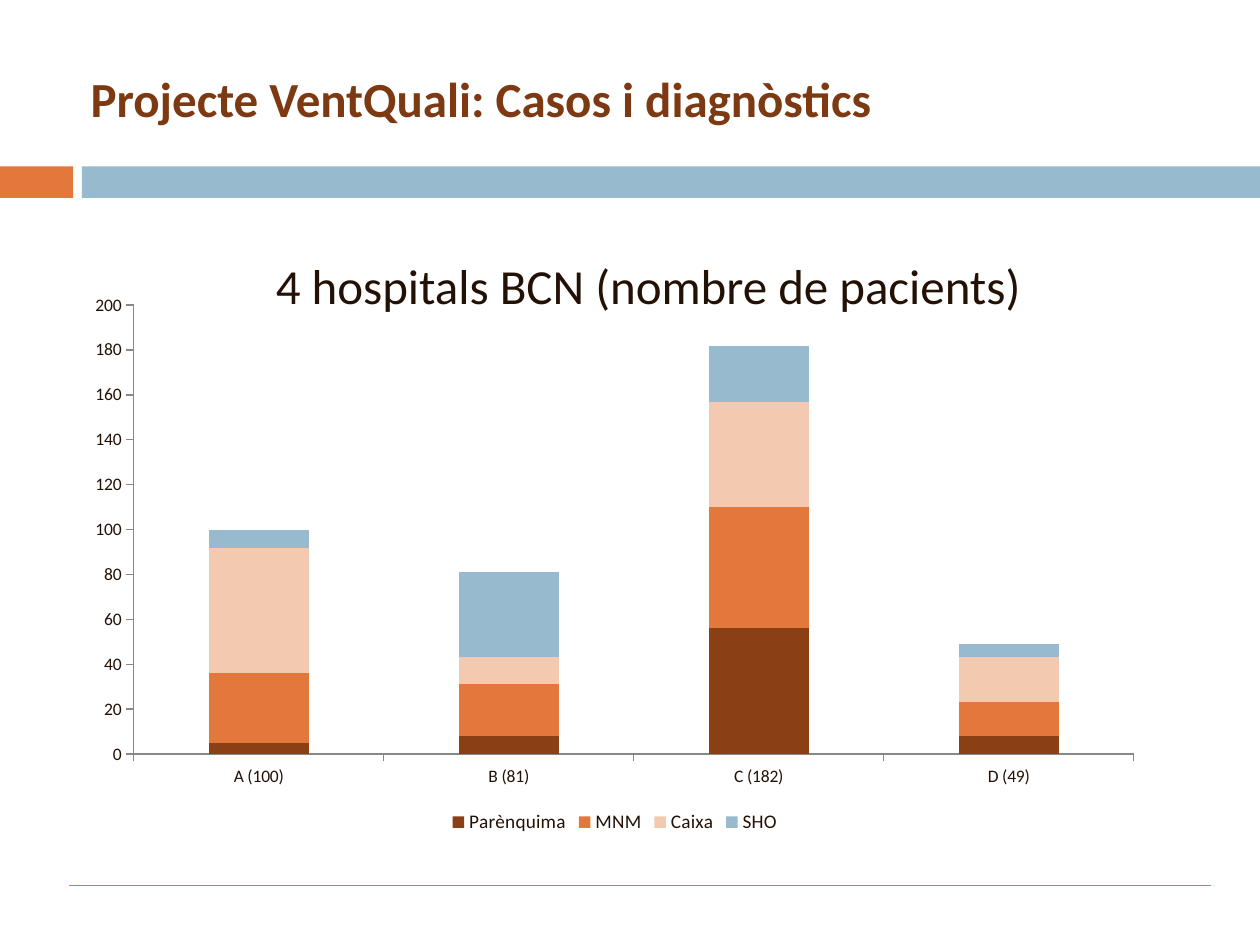
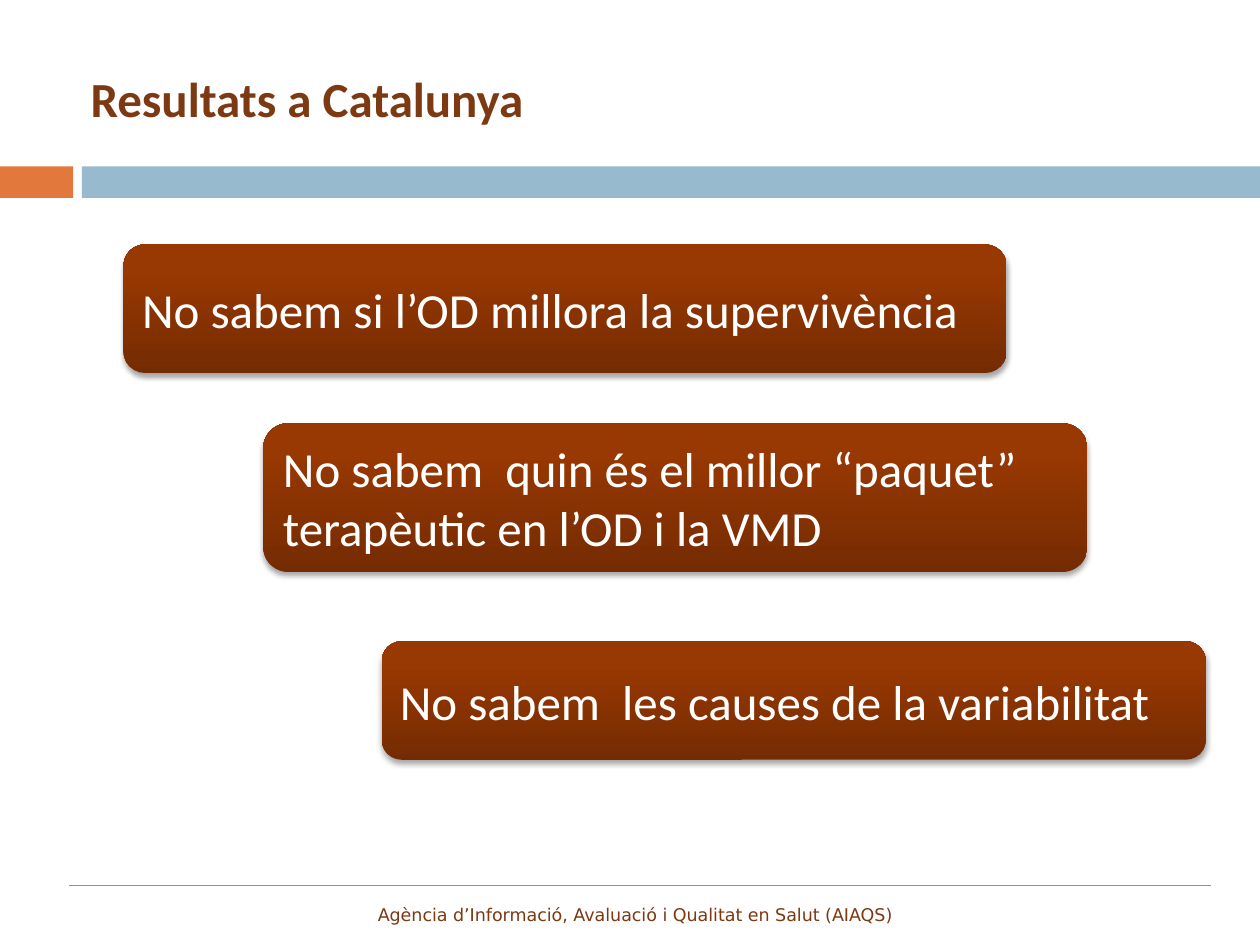
from pptx import Presentation
from pptx.chart.data import CategoryChartData
from pptx.dml.color import RGBColor
from pptx.enum.chart import XL_CHART_TYPE, XL_LEGEND_POSITION, XL_TICK_MARK
from pptx.enum.shapes import MSO_CONNECTOR, MSO_SHAPE
from pptx.enum.text import MSO_ANCHOR, PP_ALIGN
from pptx.oxml import parse_xml
from pptx.oxml.ns import nsdecls
from pptx.util import Inches, Pt

COLORS = {
    "orange": "E2783B", "blue": "97BACF", "title": "7C3912", "text": "231106",
    "brown": "8B3F14", "peach": "F3C9B0", "axis": "888888", "white": "FFFFFF",
    "card_dark": "752B02", "card_mid": "983802", "card_light": "9B3800",
    "shadow": "000000",
}
TITLE_FORMAT = {"name": "Calibri", "size": Pt(28), "bold": True}
BODY_FORMAT = {"name": "Calibri", "size": Pt(28)}
FOOTER_FORMAT = {"name": "DejaVu Sans", "size": Pt(10)}
AXIS_FORMAT = {"name": "Calibri", "size": Pt(10)}
LEGEND_FORMAT = {"name": "Calibri", "size": Pt(11)}

TITLE_BOX = (0.62, 0.31, 8.88, 0.94)
FOOTER_BOX = (0.55, 7.03, 8.98, 0.36)
BANDS = [((0, 1.32, 0.58, 0.25), "orange"), ((0.65, 1.32, 9.35, 0.25), "blue")]
FOOTER_RULE = (0.55, 7.03, 9.61, 7.03)

CATEGORIES = ["A (100)", "B (81)", "C (182)", "D (49)"]
DIAGNOSES = [
    ("Parènquima", (5, 8, 56, 8), "brown"),
    ("MNM", (31, 23, 54, 15), "orange"),
    ("Caixa", (56, 12, 47, 20), "peach"),
    ("SHO", (8, 38, 25, 6), "blue"),
]
UNKNOWNS = [
    ((0.98, 1.94, 7.01, 1.02), "No sabem si l’OD millora la supervivència"),
    ((2.09, 3.36, 6.54, 1.18),
     "No sabem  quin és el millor “paquet” terapèutic en l’OD i la VMD"),
    ((3.03, 5.09, 6.54, 0.94), "No sabem  les causes de la variabilitat"),
]


def rgb(color):
    return RGBColor.from_string(COLORS[color])


def inches(box):
    return [Inches(length) for length in box]


def format_font(font, values, color):
    for name, value in values.items():
        setattr(font, name, value)
    font.color.rgb = rgb(color)


def write_text(shape, text, values, color, anchor=MSO_ANCHOR.MIDDLE,
               align=PP_ALIGN.LEFT, wrap=True):
    frame = shape.text_frame
    frame.word_wrap = wrap
    frame.vertical_anchor = anchor
    paragraph = frame.paragraphs[0]
    paragraph.alignment = align
    run = paragraph.add_run()
    run.text = text
    format_font(run.font, values, color)


def add_text(slide, box, *args, **options):
    write_text(slide.shapes.add_textbox(*inches(box)), *args, **options)


def add_frame(presentation, title):
    """Add a slide with the bands, bottom rule and title that all slides share."""
    slide = presentation.slides.add_slide(presentation.slide_layouts[6])
    for box, color in BANDS:
        band = slide.shapes.add_shape(MSO_SHAPE.RECTANGLE, *inches(box))
        band.shadow.inherit = False
        band.fill.solid()
        band.fill.fore_color.rgb = rgb(color)
        band.line.fill.background()
    rule = slide.shapes.add_connector(MSO_CONNECTOR.STRAIGHT, *inches(FOOTER_RULE))
    rule.line.color.rgb = rgb("orange")
    rule.line.width = Pt(0.75)
    rule._element.spPr.append(parse_xml(f"<a:effectLst {nsdecls('a')}/>"))
    add_text(slide, TITLE_BOX, title, TITLE_FORMAT, "title")
    return slide


def set_plot_layout(chart, **fractions):
    """Fix the inner plot area as fractions of the chart frame."""
    plot_area = chart._chartSpace.chart.plotArea
    for layout in plot_area.xpath("c:layout"):
        plot_area.remove(layout)
    sizes = "".join(f'<c:{name} val="{value}"/>' for name, value in fractions.items())
    plot_area.insert(0, parse_xml(
        f"<c:layout {nsdecls('c')}><c:manualLayout>"
        '<c:layoutTarget val="inner"/><c:xMode val="edge"/><c:yMode val="edge"/>'
        f"{sizes}</c:manualLayout></c:layout>"))


def add_diagnosis_chart(slide, box):
    data = CategoryChartData(number_format="0")
    data.categories = CATEGORIES
    for name, values, _ in DIAGNOSES:
        data.add_series(name, values)
    chart = slide.shapes.add_chart(
        XL_CHART_TYPE.COLUMN_STACKED, *inches(box), data).chart
    chart.has_title = False
    format_font(chart.font, AXIS_FORMAT, "text")
    plot = chart.plots[0]
    plot.gap_width, plot.overlap, plot.vary_by_categories = 150, 100, False
    for series, (_, _, color) in zip(plot.series, DIAGNOSES):
        series.format.fill.solid()
        series.format.fill.fore_color.rgb = rgb(color)
    for axis in (chart.category_axis, chart.value_axis):
        axis.has_major_gridlines = False
        axis.major_tick_mark = XL_TICK_MARK.OUTSIDE
        axis.minor_tick_mark = XL_TICK_MARK.NONE
        axis.format.line.color.rgb = rgb("axis")
        axis.format.line.width = Pt(0.75)
        format_font(axis.tick_labels.font, AXIS_FORMAT, "text")
    scale = chart.value_axis
    scale.minimum_scale, scale.maximum_scale, scale.major_unit = 0, 200, 20
    scale.tick_labels.number_format = "0"
    scale.tick_labels.number_format_is_linked = False
    chart.has_legend = True
    chart.legend.position = XL_LEGEND_POSITION.BOTTOM
    chart.legend.include_in_layout = False
    format_font(chart.legend.font, LEGEND_FORMAT, "text")
    set_plot_layout(chart, x=0.055, y=0.039, w=0.925, h=0.808)


def add_card(slide, box, text):
    """Add a rounded box with a vertical gradient and a soft shadow below."""
    card = slide.shapes.add_shape(MSO_SHAPE.ROUNDED_RECTANGLE, *inches(box))
    card.line.fill.background()
    stops = "".join(
        f'<a:gs pos="{percent * 1000}"><a:srgbClr val="{COLORS[color]}"/></a:gs>'
        for percent, color in ((0, "card_dark"), (80, "card_mid"), (100, "card_light")))
    properties = card._element.spPr
    properties.ln.addprevious(parse_xml(
        f'<a:gradFill {nsdecls("a")} rotWithShape="1"><a:gsLst>{stops}</a:gsLst>'
        '<a:lin ang="16200000" scaled="0"/></a:gradFill>'))
    properties.append(parse_xml(
        f'<a:effectLst {nsdecls("a")}><a:outerShdw blurRad="{Pt(3.1)}" '
        f'dist="{Pt(1.8)}" dir="5400000" rotWithShape="0">'
        f'<a:srgbClr val="{COLORS["shadow"]}"><a:alpha val="35000"/></a:srgbClr>'
        "</a:outerShdw></a:effectLst>"))
    write_text(card, text, BODY_FORMAT, "white")


def add_cases_slide(presentation):
    slide = add_frame(presentation, "Projecte VentQuali: Casos i diagnòstics")
    add_diagnosis_chart(slide, (0.59, 2.25, 8.58, 4.41))
    add_text(slide, (2.09, 1.98, 6.18, 0.57), "4 hospitals BCN (nombre de pacients)",
             BODY_FORMAT, "text", anchor=MSO_ANCHOR.TOP, wrap=False)


def add_results_slide(presentation):
    slide = add_frame(presentation, "Resultats a Catalunya")
    add_text(slide, FOOTER_BOX,
             "Agència d’Informació, Avaluació i Qualitat en Salut (AIAQS)",
             FOOTER_FORMAT, "title", anchor=MSO_ANCHOR.BOTTOM, align=PP_ALIGN.CENTER)
    for box, text in UNKNOWNS:
        add_card(slide, box, text)


def main():
    presentation = Presentation()
    presentation.slide_width = Inches(10)
    presentation.slide_height = Inches(7.5)
    add_cases_slide(presentation)
    add_results_slide(presentation)
    presentation.save("out.pptx")


if __name__ == "__main__":
    main()
